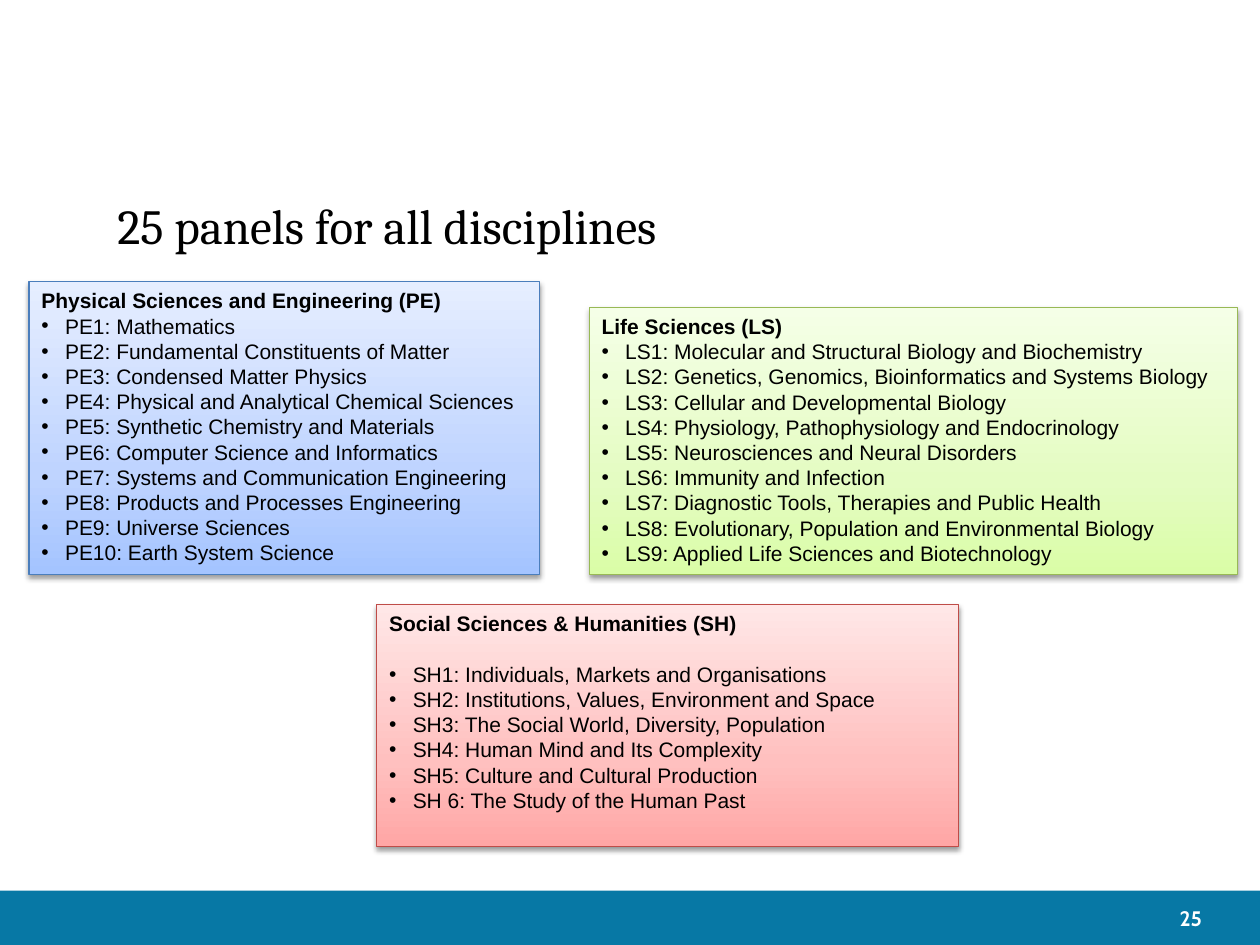
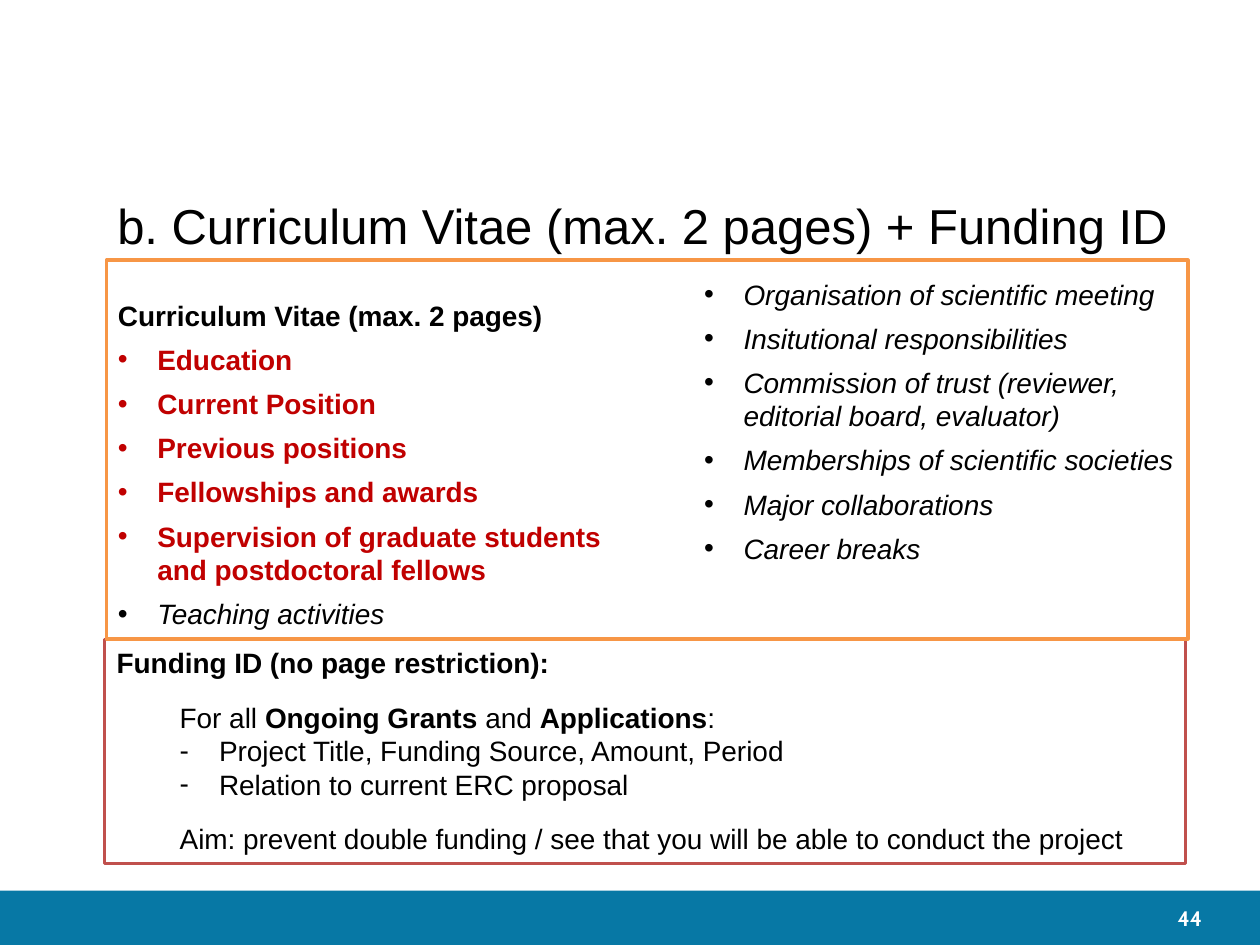
"""Builds two slides on research panels and the parts of a grant proposal."""
import pptx
import pptx.dml.color
import pptx.enum.shapes
import pptx.enum.text
import pptx.oxml.ns
import pptx.util
from lxml import etree

Pt = pptx.util.Pt
RECT = pptx.enum.shapes.MSO_SHAPE.RECTANGLE
ALIGN = pptx.enum.text.PP_ALIGN
ANCHOR = pptx.enum.text.MSO_ANCHOR
FIT = pptx.enum.text.MSO_AUTO_SIZE
qn = pptx.oxml.ns.qn

HUES = {
    "black": "000000", "white": "FFFFFF", "band": "0778A5",
    "red": "C00000", "orange": "F79646", "brick": "C0504D",
}

WIDE, HIGH = 720, 540
BAND = 31
TITLE = (59.8, 108, 628, 41.8)
PAGE = (502.6, 509.8, 184.3, 30.2)

PANELS = [
    {
        "head": "Social Sciences & Humanities (SH)",
        "at": (215.3, 345.6, 332.6, 138.2), "gap": 14.4,
        "fade": ("FFA6A5", "FFC0BF", "FFE7E7"), "line": "BF4C48",
        "items": [
            "SH1: Individuals, Markets and Organisations",
            "SH2: Institutions, Values, Environment and Space",
            "SH3: The Social World, Diversity, Population",
            "SH4: Human Mind and Its Complexity",
            "SH5: Culture and Cultural Production",
            "SH 6: The Study of the Human Past",
        ],
    },
    {
        "head": "Physical Sciences and Engineering (PE)",
        "at": (16.6, 161, 291.8, 167.2), "gap": 0,
        "fade": ("A4C4FF", "BFD4FF", "E6EEFF"), "line": "4B7EBC",
        "items": [
            "PE1: Mathematics",
            "PE2: Fundamental Constituents of Matter",
            "PE3: Condensed Matter Physics",
            "PE4: Physical and Analytical Chemical Sciences",
            "PE5: Synthetic Chemistry and Materials",
            "PE6: Computer Science and Informatics",
            "PE7: Systems and Communication Engineering",
            "PE8: Products and Processes Engineering",
            "PE9: Universe Sciences",
            "PE10: Earth System Science",
        ],
    },
    {
        "head": "Life Sciences (LS)",
        "at": (336.7, 175.7, 370.3, 152.5), "gap": 0,
        "fade": ("DAFDA7", "E4FCC2", "F5FFE7"), "line": "98B955",
        "items": [
            "LS1: Molecular and Structural Biology and Biochemistry",
            "LS2: Genetics, Genomics, Bioinformatics and Systems Biology",
            "LS3: Cellular and Developmental Biology",
            "LS4: Physiology, Pathophysiology and Endocrinology",
            "LS5: Neurosciences and Neural Disorders",
            "LS6: Immunity and Infection",
            "LS7: Diagnostic Tools, Therapies and Public Health",
            "LS8: Evolutionary, Population and Environmental Biology",
            "LS9: Applied Life Sciences and Biotechnology",
        ],
    },
]

CV_HEAD = "Curriculum Vitae (max. 2 pages)"
CV_MUST = [
    "Education",
    "Current Position",
    "Previous positions",
    "Fellowships and awards",
    "Supervision of graduate students and postdoctoral fellows",
]
CV_LEFT = ["Teaching activities"]
CV_RIGHT = [
    "Organisation of scientific meeting",
    "Insitutional responsibilities",
    "Commission of trust (reviewer, editorial board, evaluator)",
    "Memberships of scientific societies",
    "Major collaborations",
    "Career breaks",
]

FUND_HEAD = "Funding ID (no page restriction):"
FUND_LEAD = [
    ("For all ", False), ("Ongoing Grants ", True), ("and ", False),
    ("Applications", True), (":", False),
]
FUND_LIST = [
    "Project Title, Funding Source, Amount, Period",
    "Relation to current ERC proposal",
]
FUND_AIM = "Aim: prevent double funding / see that you will be able to conduct the project"


def rgb(hue):
    return pptx.dml.color.RGBColor.from_string(HUES.get(hue, hue))


def place(shape, at):
    shape.left, shape.top, shape.width, shape.height = map(Pt, at)


def sub(node, tag, **attrs):
    return etree.SubElement(node, qn(tag), **attrs)


def prep(shape):
    frame = shape.text_frame
    frame.word_wrap = True
    frame.auto_size = FIT.NONE
    frame.vertical_anchor = ANCHOR.TOP
    return frame


def write(frame, text, size, font="Arial", hue="black", bold=False, slant=False,
          gap=0, left=0, hang=0, mark=None, align=ALIGN.LEFT):
    """Add a paragraph; text is a string or a list of (words, bold) runs."""
    para = frame.paragraphs[0]
    first = not para.runs
    if not first:
        para = frame.add_paragraph()
    para.alignment = align
    para.space_before = Pt(0 if first else gap)
    props = para._p.get_or_add_pPr()
    props.set("marL", str(Pt(left)))
    props.set("indent", str(-Pt(hang)))
    if mark:
        sub(props, "a:buFont", typeface="Arial")
        sub(props, "a:buChar", char=mark)
    else:
        sub(props, "a:buNone")
    for words, heavy in [(text, bold)] if isinstance(text, str) else text:
        run = para.add_run()
        run.text = words
        run.font.name, run.font.size = font, Pt(size)
        run.font.bold, run.font.italic = heavy, slant
        run.font.color.rgb = rgb(hue)


def box(slide, at, fill=None, line=None, weight=0.75):
    shape = slide.shapes.add_shape(RECT, *map(Pt, at))
    shape.shadow.inherit = False
    if fill:
        shape.fill.solid()
        shape.fill.fore_color.rgb = rgb(fill)
    else:
        shape.fill.background()
    if line:
        shape.line.color.rgb = rgb(line)
        shape.line.width = Pt(weight)
    else:
        shape.line.fill.background()
    return shape


def fade(shape, hues):
    shape.fill.gradient()
    shape.fill.gradient_angle = 90
    props = shape._element.spPr
    stops = props.find(".//" + qn("a:gsLst"))
    for stop in list(stops):
        stops.remove(stop)
    for pos, hue in zip((0, 35, 100), hues):
        stop = sub(stops, "a:gs", pos=str(pos * 1000))
        sub(stop, "a:srgbClr", val=hue)
    cast = sub(props.find(qn("a:effectLst")), "a:outerShdw", blurRad=str(Pt(3.1)),
               dist=str(Pt(1.6)), dir="5400000", rotWithShape="0")
    sub(sub(cast, "a:srgbClr", val=HUES["black"]), "a:alpha", val="38000")


def start(deck, layout, title, font, page):
    slide = deck.slides.add_slide(deck.slide_layouts[layout])
    box(slide, (0, HIGH - BAND, WIDE, BAND), "band")
    frame = prep(slide.shapes.add_textbox(*map(Pt, PAGE)))
    frame.vertical_anchor = ANCHOR.MIDDLE
    frame.margin_left = frame.margin_right = frame.margin_top = frame.margin_bottom = 0
    write(frame, page, 12, "Cabin", "white", bold=True, align=ALIGN.RIGHT)
    place(slide.shapes.title, TITLE)
    write(prep(slide.shapes.title), title, 28, font)
    return slide


def panels(deck):
    slide = start(deck, 5, "25 panels for all disciplines", "Cambria", "25")
    for panel in PANELS:
        shape = box(slide, panel["at"], line=panel["line"])
        fade(shape, panel["fade"])
        frame = prep(shape)
        write(frame, panel["head"], 12, bold=True)
        for num, item in enumerate(panel["items"]):
            write(frame, item, 12, gap=0 if num else panel["gap"],
                  left=13.5, hang=13.5, mark="•")


def vitae(deck):
    slide = start(deck, 1, "b. Curriculum Vitae (max. 2 pages) + Funding ID", "Arial", "44")
    point = {"size": 16, "gap": 6, "left": 22.5, "hang": 22.5, "mark": "•"}

    body = slide.placeholders[1]
    place(body, (60.2, 167, 319, 185.8))
    frame = prep(body)
    write(frame, CV_HEAD, 16, bold=True)
    for item in CV_MUST:
        write(frame, item, hue="red", bold=True, **point)
    for item in CV_LEFT:
        write(frame, item, slant=True, **point)

    side = slide.shapes.add_textbox(*map(Pt, (395.3, 154.8, 284, 173.5)))
    frame = prep(side)
    for item in CV_RIGHT:
        write(frame, item, slant=True, **point)

    fund = box(slide, (59.6, 365.4, 618, 128.2), line="brick", weight=1.5)
    frame = prep(fund)
    write(frame, FUND_HEAD, 16, bold=True)
    write(frame, FUND_LEAD, 16, gap=12, left=36)
    for item in FUND_LIST:
        write(frame, item, 16, left=58.5, hang=22.5, mark="-")
    write(frame, FUND_AIM, 16, gap=12, left=36)

    box(slide, (60.8, 148.7, 618, 216.4), line="orange", weight=2)


def main():
    deck = pptx.Presentation()
    deck.slide_width, deck.slide_height = Pt(WIDE), Pt(HIGH)
    panels(deck)
    vitae(deck)
    deck.save("out.pptx")


if __name__ == "__main__":
    main()
